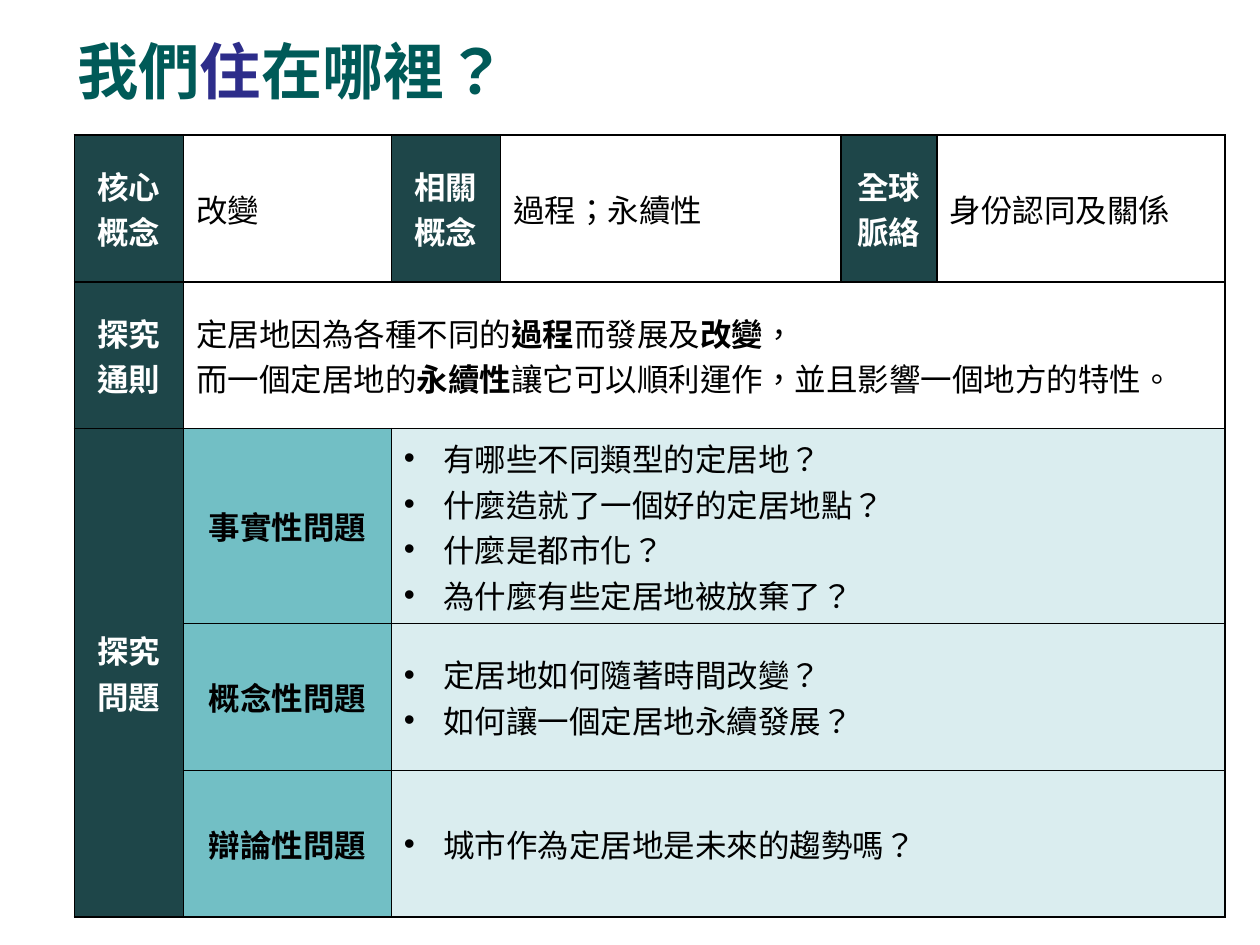
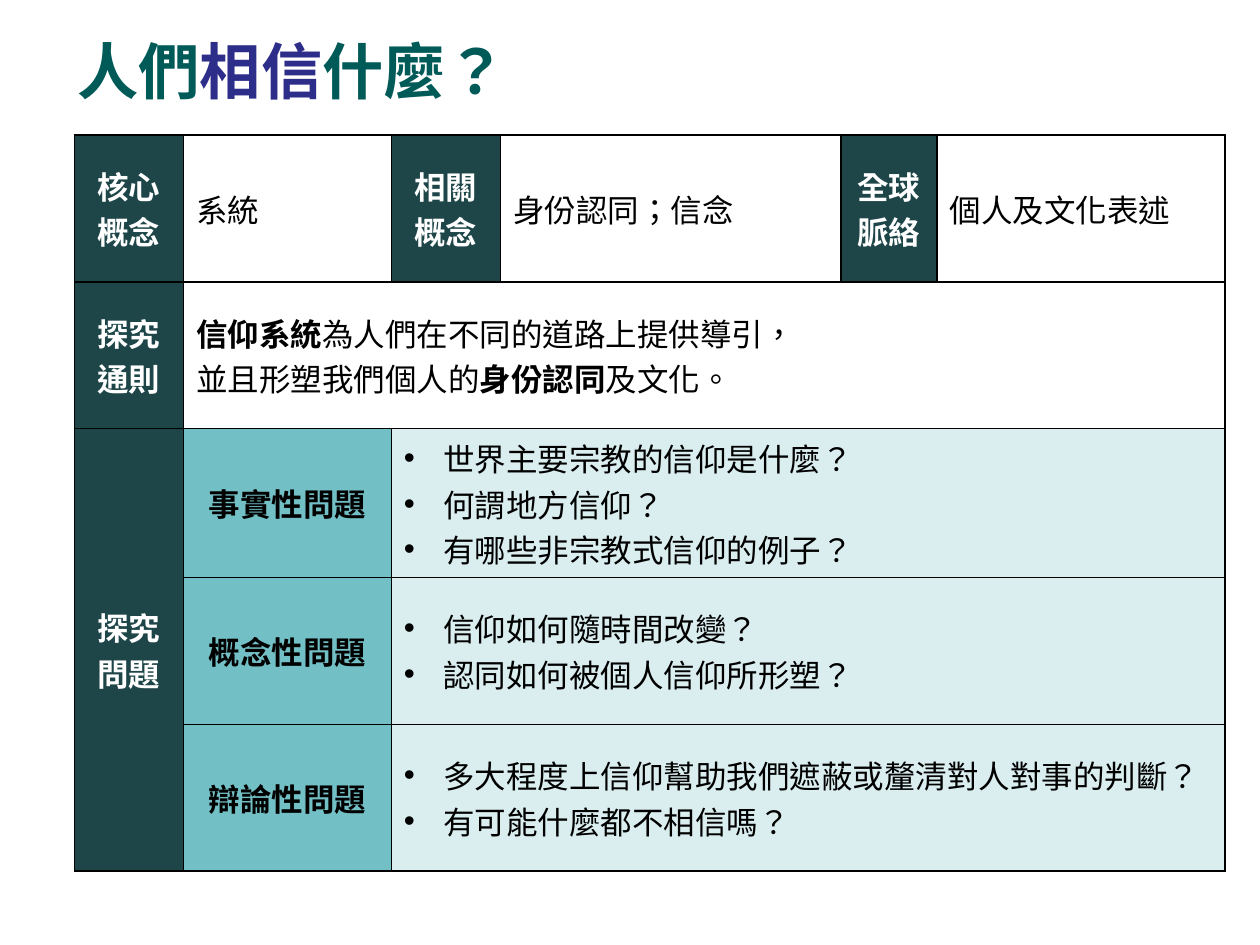
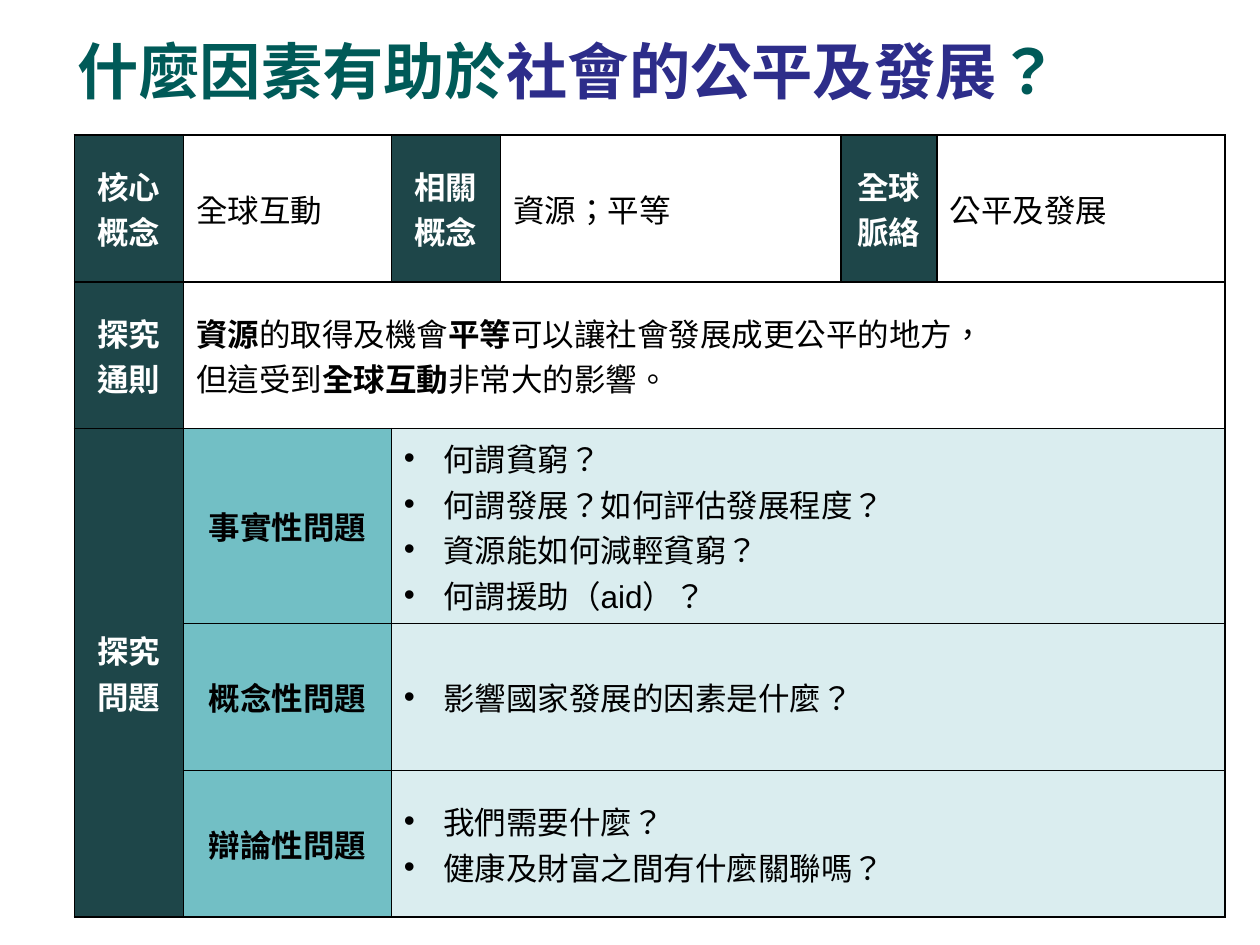
import lxml.etree
import pptx
import pptx.dml.color
import pptx.enum.lang
import pptx.enum.text
import pptx.oxml.ns
import pptx.util

Cm = pptx.util.Cm
Pt = pptx.util.Pt
CENTER = pptx.enum.text.PP_ALIGN.CENTER
LEFT = pptx.enum.text.PP_ALIGN.LEFT
MIDDLE = pptx.enum.text.MSO_ANCHOR.MIDDLE
TAIWAN = pptx.enum.lang.MSO_LANGUAGE_ID.TRADITIONAL_CHINESE

FONT = "Arial"
BLACK, WHITE = "000000", "FFFFFF"
GREEN, PURPLE = "005A58", "2D2D8A"
DARK, TEAL, PALE = "1E4649", "72BFC5", "DAEDEF"
TITLE_BOX = (1.31, 0.53, 22.86, 1.75)
TABLE_PLACE = (1.5, 2.72)
COLUMN_WIDTHS = (2.2, 4.19, 2.2, 6.86, 1.94, 5.8)
ROW_HEIGHT = 2.96
LINE_HEIGHT = 0.93
ROW_PADDING = 0.21
INDENT = 0.79
CONCEPT_HEADS = ("核心概念", "相關概念", "全球脈絡")
QUESTION_HEADS = ("事實性問題", "概念性問題", "辯論性問題")

UNITS = (
    {
        "title": "我們*住*在哪裡？",
        "concepts": ("改變", "過程；永續性", "身份認同及關係"),
        "statement": (
            "定居地因為各種不同的*過程*而發展及*改變*，",
            "而一個定居地的*永續性*讓它可以順利運作，並且影響一個地方的特性。",
        ),
        "questions": (
            ("有哪些不同類型的定居地？", "什麼造就了一個好的定居地點？",
             "什麼是都市化？", "為什麼有些定居地被放棄了？"),
            ("定居地如何隨著時間改變？", "如何讓一個定居地永續發展？"),
            ("城市作為定居地是未來的趨勢嗎？",),
        ),
    },
    {
        "title": "人們*相信*什麼？",
        "concepts": ("系統", "身份認同；信念", "個人及文化表述"),
        "statement": (
            "*信仰系統*為人們在不同的道路上提供導引，",
            "並且形塑我們個人的*身份認同*及文化。",
        ),
        "questions": (
            ("世界主要宗教的信仰是什麼？", "何謂地方信仰？", "有哪些非宗教式信仰的例子？"),
            ("信仰如何隨時間改變？", "認同如何被個人信仰所形塑？"),
            ("多大程度上信仰幫助我們遮蔽或釐清對人對事的判斷？", "有可能什麼都不相信嗎？"),
        ),
    },
    {
        "title": "什麼因素有助於*社會的公平及發展*？",
        "concepts": ("全球互動", "資源；平等", "公平及發展"),
        "statement": (
            "*資源*的取得及機會*平等*可以讓社會發展成更公平的地方，",
            "但這受到*全球互動*非常大的影響。",
        ),
        "questions": (
            ("何謂貧窮？", "何謂發展？如何評估發展程度？", "資源能如何減輕貧窮？", "何謂援助（aid）？"),
            ("影響國家發展的因素是什麼？",),
            ("我們需要什麼？", "健康及財富之間有什麼關聯嗎？"),
        ),
    },
)


def rgb(value):
    return pptx.dml.color.RGBColor.from_string(value)


def add_element(parent, tag, **attributes):
    return lxml.etree.SubElement(parent, pptx.oxml.ns.qn(tag), **attributes)


def add_span(para, text, size, color, bold):
    span = para.add_run()
    span.text = text
    span.font.name = FONT
    span.font.size = Pt(size)
    span.font.bold = bold
    span.font.color.rgb = rgb(color)
    span.font.language_id = TAIWAN


def add_marked(para, text, size, plain, marked):
    for index, part in enumerate(text.split("*")):
        if part:
            color, bold = marked if index % 2 else plain
            add_span(para, part, size, color, bold)


def add_bullet(para):
    properties = para._p.get_or_add_pPr()
    properties.set("marL", str(Cm(INDENT)))
    properties.set("indent", str(-Cm(INDENT)))
    add_element(properties, "a:buFont", typeface=FONT)
    add_element(properties, "a:buChar", char="•")


def add_borders(cell):
    properties = cell._tc.get_or_add_tcPr()
    for side in ("L", "R", "T", "B"):
        line = add_element(properties, f"a:ln{side}", w=str(Pt(1)))
        add_element(add_element(line, "a:solidFill"), "a:srgbClr", val=BLACK)


def fill_cell(cell, lines, color=BLACK, bold=False, fill=None, align=LEFT, bullets=False):
    cell.vertical_anchor = MIDDLE
    if fill:
        cell.fill.solid()
        cell.fill.fore_color.rgb = rgb(fill)
    frame = cell.text_frame
    for index, line in enumerate(lines):
        para = frame.add_paragraph() if index else frame.paragraphs[0]
        para.alignment = align
        if bullets:
            add_bullet(para)
        add_marked(para, line, 18, (color, bold), (color, True))


def fill_head(cell, text):
    fill_cell(cell, [text], WHITE, True, DARK, CENTER)


def add_title(page, box, text):
    frame = page.shapes.add_textbox(*map(Cm, box)).text_frame
    frame.word_wrap = True
    frame.vertical_anchor = MIDDLE
    add_marked(frame.paragraphs[0], text, 35, (GREEN, True), (PURPLE, True))


def fit_row(lines):
    return max(ROW_HEIGHT, len(lines) * LINE_HEIGHT + ROW_PADDING)


def add_grid(page, place, widths, heights):
    box = (*place, sum(widths), sum(heights))
    table = page.shapes.add_table(len(heights), len(widths), *map(Cm, box)).table
    table.first_row = False
    table.horz_banding = False
    for column, width in zip(table.columns, widths):
        column.width = Cm(width)
    for row, height in zip(table.rows, heights):
        row.height = Cm(height)
    for cell in table.iter_cells():
        add_borders(cell)
        cell.fill.background()
    return table


def add_unit_table(page, place, unit):
    heights = [ROW_HEIGHT, fit_row(unit["statement"]), *map(fit_row, unit["questions"])]
    table = add_grid(page, place, COLUMN_WIDTHS, heights)
    last_column = len(COLUMN_WIDTHS) - 1
    last_row = len(heights) - 1

    for index, (head, concept) in enumerate(zip(CONCEPT_HEADS, unit["concepts"])):
        fill_head(table.cell(0, 2 * index), head)
        fill_cell(table.cell(0, 2 * index + 1), [concept])

    fill_head(table.cell(1, 0), "探究通則")
    table.cell(1, 1).merge(table.cell(1, last_column))
    fill_cell(table.cell(1, 1), unit["statement"])

    table.cell(2, 0).merge(table.cell(last_row, 0))
    fill_head(table.cell(2, 0), "探究問題")
    for row, (head, questions) in enumerate(zip(QUESTION_HEADS, unit["questions"]), 2):
        fill_cell(table.cell(row, 1), [head], bold=True, fill=TEAL, align=CENTER)
        table.cell(row, 2).merge(table.cell(row, last_column))
        fill_cell(table.cell(row, 2), questions, fill=PALE, bullets=True)


def main():
    deck = pptx.Presentation()
    deck.slide_width = Cm(25.4)
    deck.slide_height = Cm(19.05)
    for unit in UNITS:
        page = deck.slides.add_slide(deck.slide_layouts[6])
        add_title(page, TITLE_BOX, unit["title"])
        add_unit_table(page, TABLE_PLACE, unit)
    deck.save("out.pptx")


if __name__ == "__main__":
    main()
